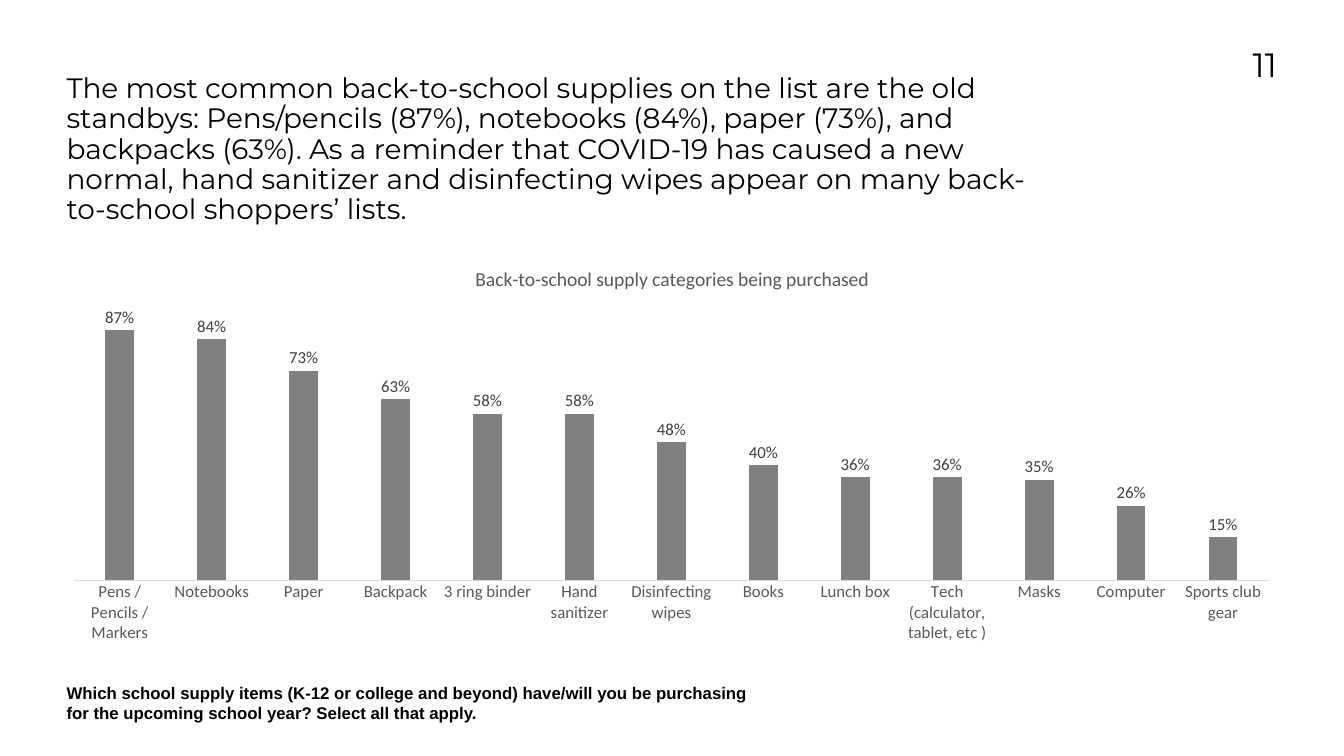
from lxml.etree import SubElement
from pptx import Presentation
from pptx.chart.data import CategoryChartData
from pptx.dml.color import RGBColor
from pptx.enum.chart import XL_CHART_TYPE, XL_LABEL_POSITION, XL_TICK_LABEL_POSITION, XL_TICK_MARK
from pptx.enum.text import MSO_ANCHOR, PP_ALIGN
from pptx.oxml.ns import qn
from pptx.util import Emu, Pt

PX = 9144  # EMU per px, 100 px to the inch

BLACK = RGBColor(0x00, 0x00, 0x00)
BAR_GREY = RGBColor(0x80, 0x80, 0x80)
LABEL_GREY = RGBColor(0x40, 0x40, 0x40)
AXIS_GREY = RGBColor(0x59, 0x59, 0x59)
LINE_GREY = RGBColor(0xD9, 0xD9, 0xD9)

HEADLINE = (
    "The most common back-to-school supplies on the list are the old standbys: "
    "Pens/pencils (87%), notebooks (84%), paper (73%), and backpacks (63%). "
    "As a reminder that COVID-19 has caused a new normal, hand sanitizer and "
    "disinfecting wipes appear on many back-to-school shoppers’ lists."
)
QUESTION = (
    "Which school supply items (K-12 or college and beyond) have/will you be "
    "purchasing for the upcoming school year? Select all that apply."
)
SUPPLIES = {
    "Pens / Pencils / Markers": 0.87,
    "Notebooks": 0.84,
    "Paper": 0.73,
    "Backpack": 0.63,
    "3 ring binder": 0.58,
    "Hand sanitizer": 0.58,
    "Disinfecting wipes": 0.48,
    "Books": 0.40,
    "Lunch box": 0.36,
    "Tech (calculator, tablet, etc )": 0.36,
    "Masks": 0.35,
    "Computer": 0.26,
    "Sports club gear": 0.15,
}


def px(*lengths):
    return [Emu(length * PX) for length in lengths]


def style_font(font, name, size, color, bold=False):
    font.name = name
    font.size = Pt(size)
    font.bold = bold
    font.color.rgb = color


def add_text(slide, box, text, font_name, size, bold=False,
             align=PP_ALIGN.LEFT, line_spacing=1.0):
    frame = slide.shapes.add_textbox(*px(*box)).text_frame
    frame.word_wrap = True
    frame.vertical_anchor = MSO_ANCHOR.TOP
    frame.margin_left = frame.margin_top = frame.margin_right = frame.margin_bottom = 0
    frame.text = text
    paragraph = frame.paragraphs[0]
    paragraph.alignment = align
    paragraph.line_spacing = line_spacing
    style_font(paragraph.runs[0].font, font_name, size, BLACK, bold)


def set_plot_area(chart, x, y, w, h):
    """Fix the inner plot area, in fractions of the chart."""
    plot_area = chart._chartSpace.chart.plotArea
    for old_layout in plot_area.findall(qn("c:layout")):
        plot_area.remove(old_layout)
    layout = SubElement(plot_area, qn("c:layout"))
    plot_area.insert(0, layout)
    manual = SubElement(layout, qn("c:manualLayout"))
    settings = {"layoutTarget": "inner", "xMode": "edge", "yMode": "edge",
                "x": x, "y": y, "w": w, "h": h}
    for tag, value in settings.items():
        SubElement(manual, qn(f"c:{tag}")).set("val", str(value))


def add_supply_chart(slide, box):
    supply_data = CategoryChartData(number_format="0%")
    supply_data.categories = list(SUPPLIES)
    supply_data.add_series("Series 1", list(SUPPLIES.values()))
    chart = slide.shapes.add_chart(
        XL_CHART_TYPE.COLUMN_CLUSTERED, *px(*box), supply_data).chart
    style_font(chart.font, "Calibri", 24, BLACK)
    chart.has_legend = False

    # Title
    chart.has_title = True
    title = chart.chart_title
    title.include_in_layout = False
    title.text_frame.text = "Back-to-school supply categories being purchased"
    style_font(title.text_frame.paragraphs[0].runs[0].font, "Calibri", 28, AXIS_GREY)

    # Axes
    supply_axis = chart.category_axis
    supply_axis.major_tick_mark = supply_axis.minor_tick_mark = XL_TICK_MARK.NONE
    supply_axis.tick_label_position = XL_TICK_LABEL_POSITION.NEXT_TO_AXIS
    supply_axis.format.line.color.rgb = LINE_GREY
    supply_axis.format.line.width = Pt(0.75)
    style_font(supply_axis.tick_labels.font, "Calibri", 24, AXIS_GREY)
    share_axis = chart.value_axis
    share_axis.visible = False
    share_axis.has_major_gridlines = False
    share_axis.minimum_scale = 0
    share_axis.maximum_scale = 1

    # Columns and their labels
    columns = chart.plots[0]
    columns.vary_by_categories = False
    columns.gap_width = 219
    columns.overlap = -27
    fill = columns.series[0].format.fill
    fill.solid()
    fill.fore_color.rgb = BAR_GREY
    columns.has_data_labels = True
    labels = columns.data_labels
    labels.show_value = True
    labels.position = XL_LABEL_POSITION.OUTSIDE_END
    labels.number_format = "0%"
    labels.number_format_is_linked = False
    style_font(labels.font, "Calibri", 24, LABEL_GREY)

    set_plot_area(chart, 0.006, 0.099, 0.987, 0.669)


def main():
    prs = Presentation()
    prs.slide_width, prs.slide_height = px(2667, 1500)
    slide = prs.slides.add_slide(prs.slide_layouts[6])

    add_supply_chart(slide, (132, 497, 2403, 852))
    # Headline, survey question and page number
    add_text(slide, (132, 148, 1971, 283), HEADLINE, "Montserrat", 40, line_spacing=0.9)
    add_text(slide, (132, 1355, 1370, 65), QUESTION, "Arial", 24, bold=True)
    add_text(slide, (2309, 88, 225, 164), "11", "Montserrat", 48, align=PP_ALIGN.RIGHT)

    prs.save("out.pptx")


if __name__ == "__main__":
    main()
